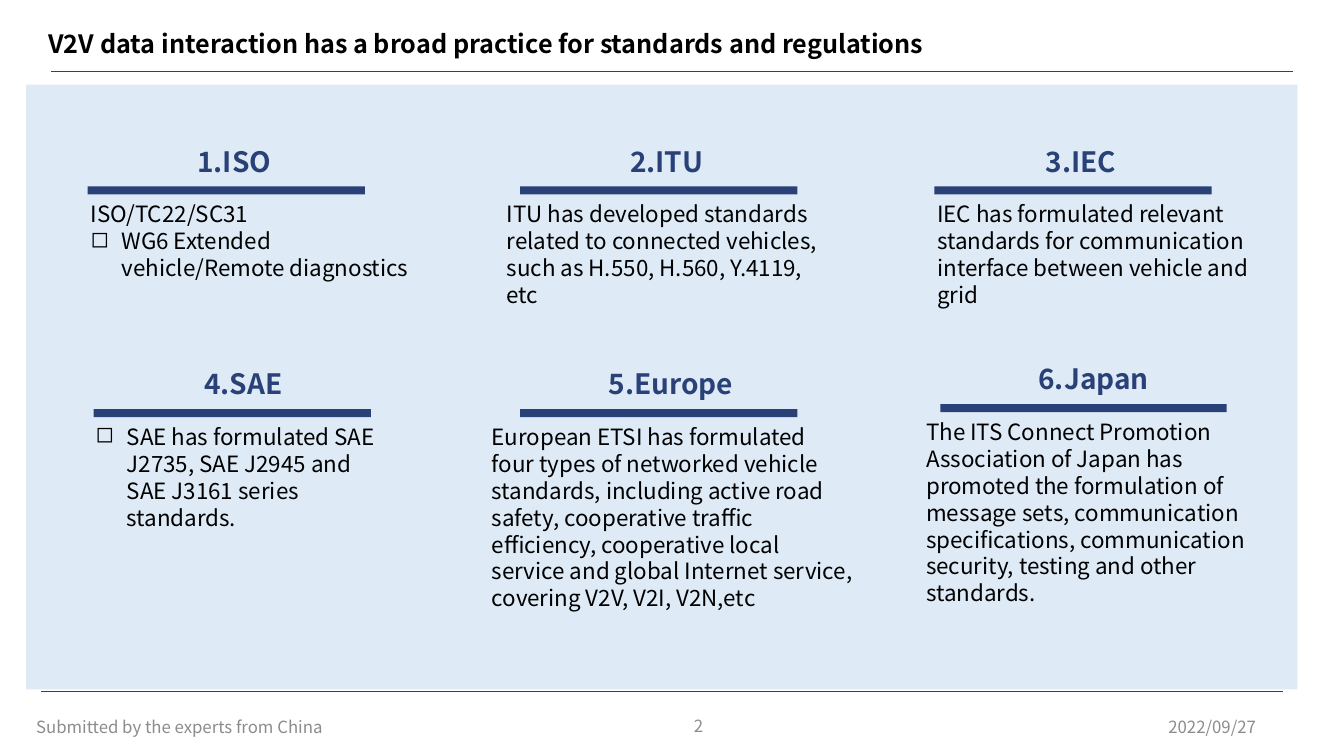
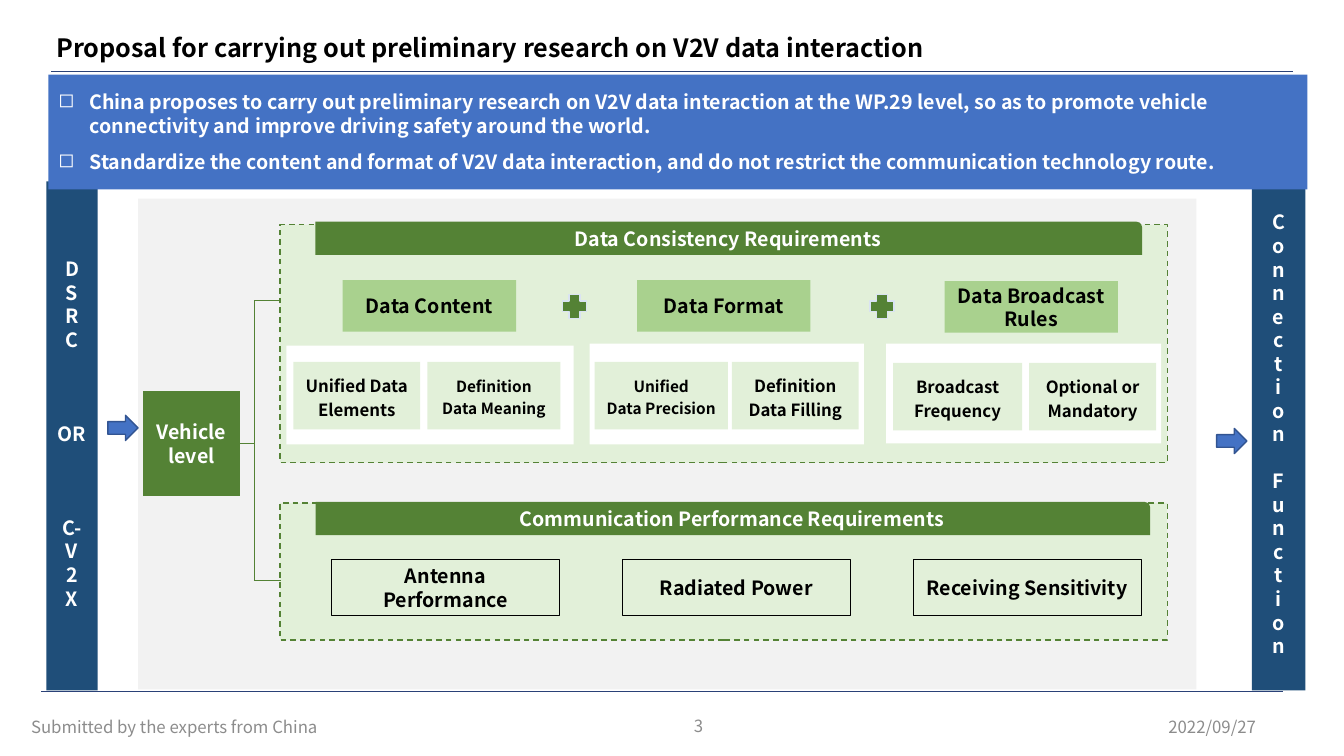
from lxml import etree
from pptx import Presentation, util as u
from pptx.dml.color import RGBColor
from pptx.enum import dml, shapes, text
from pptx.oxml.ns import qn

# Shared look; every length is in grid cells of a tenth of an inch
COLS, ROWS = 133.33, 75
FONT = "Noto Sans CJK SC"
NAVY, DEEP, BLUE, EDGE = "2A4177", "1F4E79", "4472C4", "325491"
SKY, FOG, GREY, MIST = "DEEBF7", "F2F2F2", "8C8C8C", "DAE3F3"
GREEN, LEAF, PALE = "548235", "A9D18E", "E2F0D9"
WHITE, BLACK = "FFFFFF", "000000"
KIND, ALIGN = shapes.MSO_SHAPE, text.PP_ALIGN
TOP, MID = text.MSO_ANCHOR.TOP, text.MSO_ANCHOR.MIDDLE
LEFT, MIDDLE, RIGHT = ALIGN.LEFT, ALIGN.CENTER, ALIGN.RIGHT
LINE = 16.8  # height of one line of 14 pt text


def cell(n):
    return u.Inches(n / 10)


def area(x, y, w, h):
    return [cell(n) for n in (x, y, w, h)]


def paint(part, hue):
    """Colour a fill, or the colour of a font or line."""
    rgb = RGBColor.from_string(hue)
    if hasattr(part, "solid"):
        part.solid()
        part.fore_color.rgb = rgb
    else:
        part.color.rgb = rgb


def bullet(para):
    props = para._p.get_or_add_pPr()
    props.set("marL", str(cell(3.1)))
    props.set("indent", str(-cell(3.1)))
    etree.SubElement(props, qn("a:buChar")).set("char", "◻")


def write(item, words, size, hue=BLACK, bold=False, align=LEFT,
          anchor=TOP, lead=None, marks=(), gaps=None):
    """Fill a frame; marks are bulleted lines, gaps are points before lines."""
    frame = item.text_frame
    frame.text = words
    frame.word_wrap = True
    frame.auto_size = text.MSO_AUTO_SIZE.NONE
    frame.vertical_anchor = anchor
    for i, para in enumerate(frame.paragraphs):
        para.alignment = align
        if i in marks:
            bullet(para)
        if lead:
            para.line_spacing = lead
        if gaps and i in gaps:
            para.space_before = u.Pt(gaps[i])
        for run in para.runs:
            font = run.font
            font.name, font.size, font.bold = FONT, u.Pt(size), bold
            paint(font, hue)
    return frame


def label(page, box, words, size, **style):
    return write(page.shapes.add_textbox(*area(*box)), words, size, **style)


def block(page, box, fill=None, edge=None, width=1, kind=KIND.RECTANGLE):
    item = page.shapes.add_shape(kind, *area(*box))
    item.shadow.inherit = False
    if fill:
        paint(item.fill, fill)
    else:
        item.fill.background()
    if edge:
        paint(item.line, edge)
        item.line.width = u.Pt(width)
    else:
        item.line.fill.background()
    return item


def tile(page, box, words, size=14, hue=BLACK, lead=None, **look):
    item = block(page, box, **look)
    write(item, words, size, hue, True, MIDDLE, MID, lead)
    return item


def rule(page, x, y, right, low, hue):
    item = page.shapes.add_connector(
        shapes.MSO_CONNECTOR.STRAIGHT, cell(x), cell(y), cell(right), cell(low))
    paint(item.line, hue)
    item.line.width = u.Pt(0.5)
    etree.SubElement(item._element.spPr, qn("a:effectLst"))
    return item


def start(deck, name, box, number, foot):
    """A page with its title, two rules and footer."""
    page = deck.slides.add_slide(deck.slide_layouts[5])
    title = page.shapes.title
    title.left, title.top, title.width, title.height = area(*box)
    write(title, name, 18, bold=True, lead=0.9)
    for x, y in ((5.1, 7.1), (4.1, 68.6)):
        rule(page, x, y, x + 123.2, y, NAVY)
    for x, y, w, words, align in (
            (95.6, 70.1, 30, "2022/09/27", RIGHT),
            (foot, 70.1, 45, "Submitted by the experts from China", LEFT),
            (54.3, 70, 30, str(number), MIDDLE)):
        label(page, (x, y, w, 4), words, 12, hue=GREY, align=align, anchor=MID)
    return page


def topic(page, y, head, mid, bar, wide, left, span, body, marks=()):
    """Heading centred on mid, a bar below it, and body text."""
    label(page, (mid - 15, y - 4.7, 30, 4.4), head, 20,
          hue=NAVY, bold=True, align=MIDDLE)
    block(page, (bar, y, wide, 0.8), NAVY)
    label(page, (left, y + 0.9, span, 22.5), body, 16, marks=marks)


def bodies(deck):
    page = start(
        deck, "V2V data interaction has a broad practice for standards and regulations",
        (3.8, 2.6, 93.6, 4.9), 2, 2.6)
    block(page, (2.6, 8.4, 126.1, 60), SKY)
    topic(page, 18.5, "1.ISO", 23.25, 8.7, 27.5, 8, 36.3,
          "ISO/TC22/SC31\nWG6 Extended vehicle/Remote diagnostics", (1,))
    topic(page, 18.5, "2.ITU", 66.15, 51.6, 27.5, 49.3, 34.4,
          "ITU has developed standards related to connected vehicles, "
          "such as H.550, H.560, Y.4119, etc")
    topic(page, 18.5, "3.IEC", 107.25, 92.7, 27.5, 92, 34.7,
          "IEC has formulated relevant standards for communication "
          "interface between vehicle and grid")
    topic(page, 40.6, "4.SAE", 24.15, 9.3, 27.5, 8.5, 30.5,
          "SAE has formulated SAE J2735, SAE J2945 and SAE J3161 series "
          "standards.", (0,))
    topic(page, 40.6, "5.Europe", 66.55, 51.6, 27.5, 47.8, 37.8,
          "European ETSI has formulated four types of networked vehicle "
          "standards, including active road safety, cooperative traffic "
          "efficiency, cooperative local service and global Internet "
          "service, covering V2V, V2I, V2N,etc")
    topic(page, 40.1, "6.Japan", 108.5, 93.3, 28.4, 90.9, 37.3,
          "The ITS Connect Promotion Association of Japan has promoted the "
          "formulation of message sets, communication specifications, "
          "communication security, testing and other standards.")


def group(page, y, high, band, wide, words):
    """Dashed panel with a banner on its upper edge."""
    panel = block(page, (27.8, y, 88, high), PALE, GREEN)
    panel.line.dash_style = dml.MSO_LINE.DASH
    tile(page, (31.3, band, wide, 3.3), words, hue=WHITE, fill=GREEN,
         kind=KIND.ROUND_1_RECTANGLE)


def data(page):
    """Three headed panels, each with two parts (x, width, size, words)."""
    group(page, 22.3, 23.6, 22, 82, "Data Consistency Requirements")
    panels = (
        ("Data Content", 34, 27.8, (28.4, 34.3, 28.5, 9.8), 35.9,
         ((29.1, 12.6, 12, "Unified Data Elements"),
          (42.4, 13.2, 11, "Definition\nData Meaning"))),
        ("Data Format", 63.2, 27.8, (58.5, 34.1, 27.2, 10), 35.9,
         ((59, 13.2, 11, "Unified\nData Precision"),
          (72.6, 12.6, 12, "Definition\nData Filling"))),
        ("Data Broadcast Rules", 93.7, 27.9, (87.9, 34.1, 27.3, 9.9), 36,
         ((88.6, 12.8, 12, "Broadcast Frequency"),
          (102.1, 12.6, 12, "Optional or Mandatory"))))
    for head, x, y, box, low, parts in panels:
        tile(page, (x, y, 17.2, 5.1), head, fill=LEAF)
        block(page, box, WHITE)
        for left, wide, size, words in parts:
            tile(page, (left, low, wide, 6.7), words, size, lead=1.2, fill=PALE)
    for x in (55.8, 86.3):
        plus = block(page, (x, 29.2, 2.4, 2.4), GREEN, MIST, kind=KIND.CROSS)
        plus.adjustments[0] = 0.28


def radio(page):
    group(page, 49.9, 13.6, 49.8, 82.8, "Communication Performance Requirements")
    names = "Antenna Performance", "Radiated Power", "Receiving Sensitivity"
    for i, name in enumerate(names):
        tile(page, (32.9 + 28.85 * i, 55.5, 22.6, 5.6), name,
             edge=BLACK, width=0.5)


def tree(page):
    """Vehicle box and the bracket to both groups."""
    root = tile(page, (14.2, 38.8, 9.6, 10.4), "Vehicle\nlevel",
                hue=WHITE, fill=GREEN)
    stem = rule(page, 23.8, 44, 25.2, 44, GREEN)
    stem.begin_connect(root, 3)
    rule(page, 25.2, 29.8, 25.2, 57.6, GREEN)
    for y in (29.8, 57.6):
        rule(page, 25.2, y, 27.9, y, GREEN)


def sides(page):
    """Upright columns, one letter a line, and the arrows beside them."""
    style = dict(size=14, hue=WHITE, bold=True, align=MIDDLE)
    link = block(page, (4.6, 18, 5.1, 50.5), DEEP)
    frame = write(link, "\n".join(["D", "S", "R", "C", "OR", "C-", "V", "2", "X"]),
                  gaps={4: 3 * LINE, 5: 3 * LINE}, **style)
    frame.margin_top = cell(7.5)
    use = block(page, (124.2, 17.6, 5.3, 50.9), DEEP)
    write(use, "\n".join("ConnectionFunction"), anchor=MID,
          gaps={len("Connection"): LINE}, **style)
    for x, y in ((10.7, 41.2), (120.7, 42.5)):
        block(page, (x, y, 3, 2.5), BLUE, EDGE, kind=KIND.RIGHT_ARROW)


def plan(deck):
    page = start(
        deck, "Proposal for carrying out preliminary research on V2V data interaction",
        (4.6, 3, 94.2, 4.9), 3, 2.1)
    block(page, (13.7, 19.7, 105, 48.7), FOG)
    data(page)
    radio(page)
    tree(page)
    sides(page)
    # Proposal band, in front of the columns
    band = block(page, (4.8, 7.4, 124.9, 11.4), BLUE)
    frame = write(
        band, "China proposes to carry out preliminary research on V2V data "
        "interaction at the WP.29 level, so as to promote vehicle connectivity "
        "and improve driving safety around the world.\n"
        "Standardize the content and format of V2V data interaction, and do "
        "not restrict the communication technology route.",
        14, WHITE, True, anchor=MID, marks=(0, 1))
    frame.paragraphs[1].line_spacing = u.Pt(26)


def main():
    deck = Presentation()
    deck.slide_width, deck.slide_height = cell(COLS), cell(ROWS)
    bodies(deck)
    plan(deck)
    deck.save("out.pptx")


if __name__ == "__main__":
    main()
